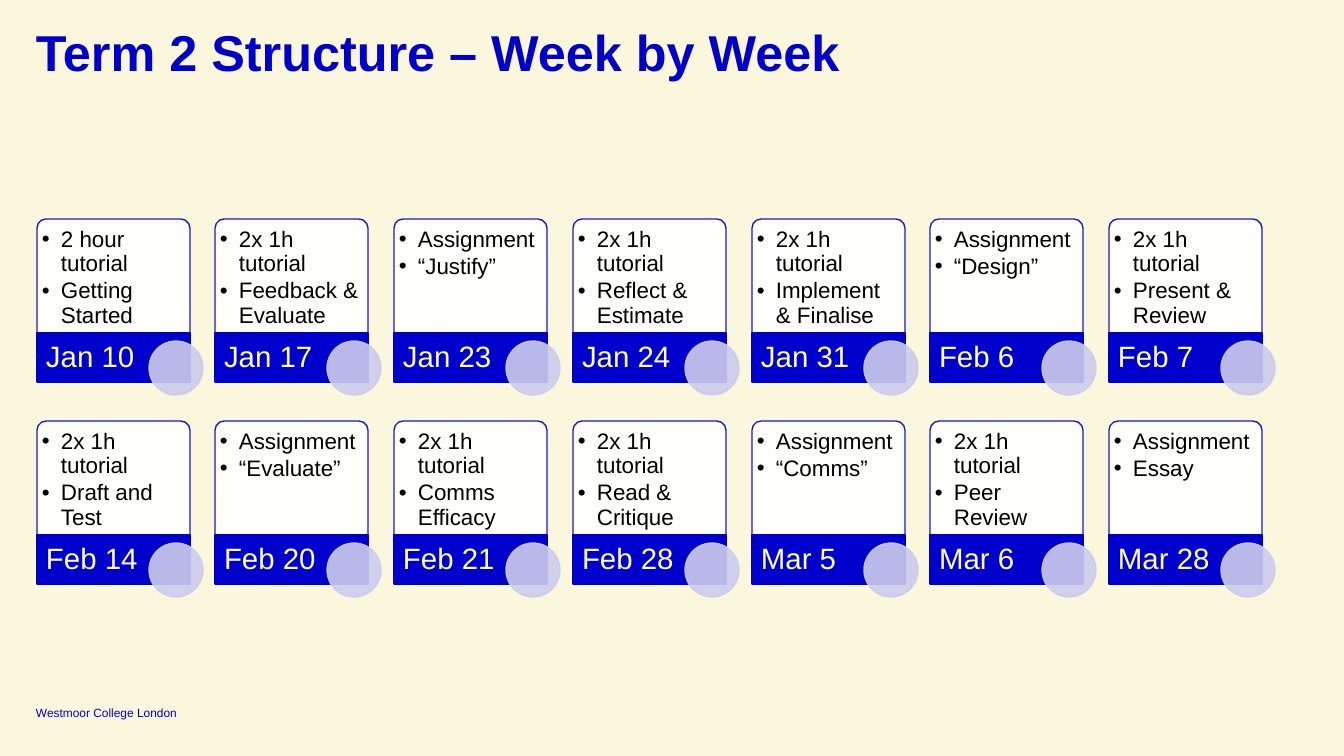
from dataclasses import dataclass

from lxml import etree
from pptx import Presentation
from pptx import util as u
from pptx.dml import color
from pptx.enum import shapes, text
from pptx.oxml import ns

BLUE, LILAC, WHITE, BLACK, CREAM = "0000CD", "CCCCED", "FFFFFF", "000000", "FBF7DC"
FORM = shapes.MSO_SHAPE
ANCHOR = text.MSO_ANCHOR


@dataclass(frozen=True)
class Box:
    x: int
    y: int
    w: int
    h: int


@dataclass(frozen=True)
class Week:
    date: str
    kind: str
    topic: str


TUTOR, TASK = "2x 1h tutorial", "Assignment"
ROWS = [
    [
        Week("Jan 10", "2 hour tutorial", "Getting Started"),
        Week("Jan 17", TUTOR, "Feedback & Evaluate"),
        Week("Jan 23", TASK, "“Justify”"),
        Week("Jan 24", TUTOR, "Reflect & Estimate"),
        Week("Jan 31", TUTOR, "Implement & Finalise"),
        Week("Feb 6", TASK, "“Design”"),
        Week("Feb 7", TUTOR, "Present & Review"),
    ],
    [
        Week("Feb 14", TUTOR, "Draft and Test"),
        Week("Feb 20", TASK, "“Evaluate”"),
        Week("Feb 21", TUTOR, "Comms Efficacy"),
        Week("Feb 28", TUTOR, "Read & Critique"),
        Week("Mar 5", TASK, "“Comms”"),
        Week("Mar 6", TUTOR, "Peer Review"),
        Week("Mar 28", TASK, "Essay"),
    ],
]


def px(n: int) -> u.Emu:
    return u.Emu(round(n * 914400 / 100.8))


def place(box: Box) -> tuple[u.Emu, ...]:
    return px(box.x), px(box.y), px(box.w), px(box.h)


def paint(fill, shade: str, alpha: int = 100) -> None:
    fill.solid()
    fill.fore_color.rgb = color.RGBColor.from_string(shade)
    if alpha < 100:
        for node in fill._xPr.iter(ns.qn("a:srgbClr")):
            etree.SubElement(node, ns.qn("a:alpha"), val=str(alpha * 1000))


def form(pen, kind: FORM, box: Box, fill: str, line: str,
         alpha: int = 100, edge: int = 100):
    item = pen.add_shape(kind, *place(box))
    item.shadow.inherit = False
    item.line.width = u.Pt(1)
    paint(item.line.fill, line, edge)
    paint(item.fill, fill, alpha)
    return item


def dot(para, indent: int) -> None:
    props = para._p.get_or_add_pPr()
    props.set("marL", str(px(indent)))
    props.set("indent", str(-px(indent)))
    etree.SubElement(props, ns.qn("a:buFont"), typeface="Arial")
    etree.SubElement(props, ns.qn("a:buChar"), char="•")


def write(pen, box: Box, *lines: str, size: float, shade: str = BLUE,
          bold: bool = False, anchor: ANCHOR = ANCHOR.TOP, inset=(0, 0, 0, 0),
          lead: float = 0.9, after: float = 0, indent: int = 0) -> None:
    frame = pen.add_textbox(*place(box)).text_frame
    frame.word_wrap = True
    frame.vertical_anchor = anchor
    frame.margin_left, frame.margin_top, frame.margin_right, frame.margin_bottom = map(px, inset)
    frame.text = "\n".join(lines)
    for para in frame.paragraphs:
        para.line_spacing = lead
        para.space_after = u.Pt(after)
        if indent:
            dot(para, indent)
        font = para.runs[0].font
        font.name, font.size, font.bold = "Arial", u.Pt(size), bold
        font.color.rgb = color.RGBColor.from_string(shade)


def card(slide, week: Week, x: int, y: int) -> None:
    pen = slide.shapes.add_group_shape().shapes
    top = form(pen, FORM.ROUND_2_SAME_RECTANGLE, Box(x, y, 153, 114), WHITE, BLUE, alpha=90)
    top.adjustments[0] = 0.08
    top.adjustments[1] = 0
    write(pen, Box(x + 3, y + 2, 147, 112), week.kind, week.topic, size=16,
          shade=BLACK, inset=(2, 7, 2, 2), after=2.4, indent=19)
    form(pen, FORM.RECTANGLE, Box(x, y + 114, 153, 49), BLUE, BLUE)
    write(pen, Box(x, y + 114, 108, 49), week.date, size=21, shade=WHITE,
          anchor=ANCHOR.MIDDLE, inset=(9, 0, 3, 0))
    form(pen, FORM.OVAL, Box(x + 112, y + 122, 54, 54), LILAC, LILAC, alpha=90, edge=90)


def main() -> None:
    deck = Presentation()
    deck.slide_width, deck.slide_height = px(1344), px(756)
    slide = deck.slides.add_slide(deck.slide_layouts[6])
    paint(slide.background.fill, CREAM)
    write(slide.shapes, Box(36, 705, 156, 15), "Westmoor College London",
          size=8.5, anchor=ANCHOR.BOTTOM, lead=1.0)
    write(slide.shapes, Box(36, 28, 1272, 41), "Term 2 Structure – Week by Week",
          size=36, bold=True)
    for row, weeks in enumerate(ROWS):
        for col, week in enumerate(weeks):
            card(slide, week, 37 + col * 715 // 4, 219 + row * 202)
    deck.save("out.pptx")


if __name__ == "__main__":
    main()
